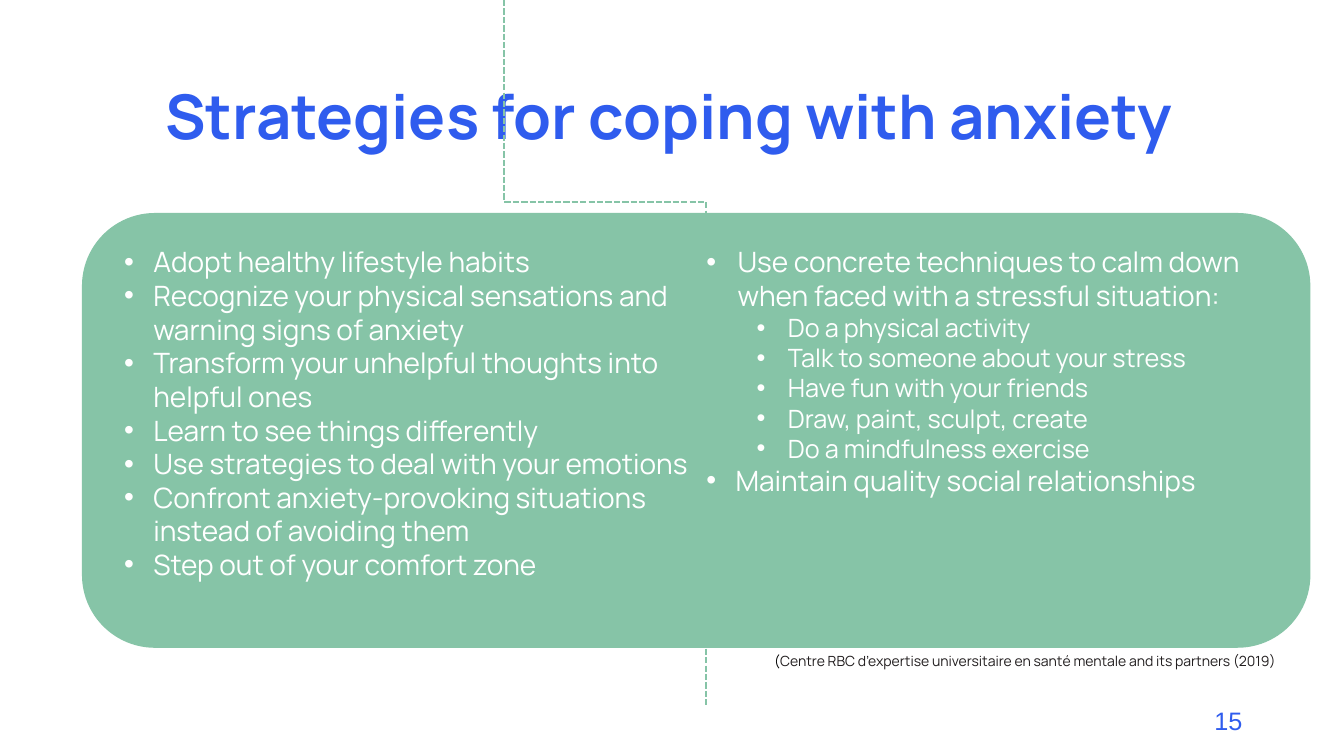
"""Build the slide on strategies for coping with anxiety."""
from lxml import etree
from pptx import Presentation
from pptx.dml.color import RGBColor
from pptx.enum import dml, shapes, text
from pptx.oxml import ns
from pptx.util import Inches, Pt

BLUE = RGBColor(0x2F, 0x5C, 0xEE)
GREEN = RGBColor(0x86, 0xC4, 0xA7)
WHITE = RGBColor(0xFF, 0xFF, 0xFF)
BLACK = RGBColor(0x00, 0x00, 0x00)
DARK = RGBColor(0x21, 0x1D, 0x1E)
FONT = "Manrope"

TITLE = "Strategies for coping with anxiety "
MAIN, WIDE, SUB = (0, 20, 0.39, 0.29), (0, 20, 0.41, 0.31), (1, 18, 0.91, 0.31)
COLUMNS = [
    [
        ("Adopt healthy lifestyle habits", MAIN),
        ("Recognize your physical sensations and warning signs of anxiety", MAIN),
        ("Transform your unhelpful thoughts into helpful ones", MAIN),
        ("Learn to see things differently", MAIN),
        ("Use strategies to deal with your emotions", MAIN),
        ("Confront anxiety-provoking situations instead of avoiding them", MAIN),
        ("Step out of your comfort zone", MAIN),
    ],
    [
        ("Use concrete techniques to calm down when faced with a stressful situation:", WIDE),
        ("Do a physical activity", SUB),
        ("Talk to someone about your stress", SUB),
        ("Have fun with your friends", SUB),
        ("Draw, paint, sculpt, create", SUB),
        ("Do a mindfulness exercise", SUB),
        ("Maintain quality social relationships", MAIN),
    ],
]
CITATION = [
    ("(", BLACK),
    ("Centre RBC d’expertise universitaire en santé mentale and its partners (2019) ", DARK),
]
PAGE_NUMBER = "15"
PANEL = (0.82, 2.12, 12.17, 4.3)
PANEL_INSET = 0.31
PATH_START = (5.29, 0.1)
PATH_CURVES = [
    ((4.8, 0.37), (4.3, 0.63), (4.63, 1.05)),
    ((4.96, 1.46), (6.53, 2.02), (7.29, 2.58)),
    ((8.05, 3.15), (9.24, 3.78), (9.19, 4.44)),
    ((9.15, 5.11), (8.08, 5.84), (7.01, 6.57)),
]
CURVE_STEPS = 24


def set_font(font, size, color, name=FONT, bold=False):
    """Apply the given look to a font."""
    font.name, font.size, font.bold = name, Pt(size), bold
    font.color.rgb = color


def add_text_box(slide, left, top, width, height):
    """Add a wrapping text box and return its text frame."""
    box = slide.shapes.add_textbox(*map(Inches, (left, top, width, height)))
    box.text_frame.word_wrap = True
    return box.text_frame


def add_dashed_path(slide):
    """Draw the winding dashed line."""
    points = []
    start = PATH_START
    for curve in PATH_CURVES:
        for step in range(1, CURVE_STEPS + 1):
            t = step / CURVE_STEPS
            weights = ((1 - t) ** 3, 3 * t * (1 - t) ** 2, 3 * t ** 2 * (1 - t), t ** 3)
            points.append(tuple(
                sum(weight * point[axis] for weight, point in zip(weights, (start, *curve)))
                for axis in (0, 1)))
        start = curve[-1]
    builder = slide.shapes.build_freeform(*PATH_START, scale=Inches(1))
    builder.add_line_segments(points, close=False)
    path = builder.convert_to_shape()
    path.shadow.inherit = False
    path.fill.background()
    path.line.color.rgb = GREEN
    path.line.width = Pt(1.5)
    path.line.dash_style = dml.MSO_LINE.SQUARE_DOT


def add_title(slide):
    """Place and format the title."""
    title = slide.shapes.title
    title.left, title.top, title.width, title.height = map(Inches, (0.27, 0.46, 12.86, 1.45))
    title.text_frame.text = TITLE
    title.text_frame.vertical_anchor = text.MSO_ANCHOR.MIDDLE
    paragraph = title.text_frame.paragraphs[0]
    paragraph.alignment = text.PP_ALIGN.CENTER
    paragraph.line_spacing = 0.9
    set_font(paragraph.runs[0].font, 44, BLUE, bold=True)


def add_bullet(paragraph, wording, style):
    """Fill a paragraph with one bulleted strategy."""
    level, size, margin, hanging = style
    paragraph.text = wording
    paragraph.level = level
    properties = paragraph._p.get_or_add_pPr()
    properties.set("marL", str(Inches(margin)))
    properties.set("indent", str(-Inches(hanging)))
    etree.SubElement(properties, ns.qn("a:buFont")).set("typeface", "Arial")
    etree.SubElement(properties, ns.qn("a:buChar")).set("char", "•")
    set_font(paragraph.runs[0].font, size, WHITE)


def add_panel(slide):
    """Draw the rounded panel and its columns of strategies."""
    left, top, width, height = PANEL
    panel = slide.shapes.add_shape(
        shapes.MSO_SHAPE.ROUNDED_RECTANGLE, *map(Inches, PANEL))
    panel.shadow.inherit = False
    panel.fill.solid()
    panel.fill.fore_color.rgb = GREEN
    panel.line.color.rgb = GREEN
    panel.line.width = Pt(1)
    column_width = (width - 2 * PANEL_INSET) / len(COLUMNS)
    for index, strategies in enumerate(COLUMNS):
        frame = add_text_box(
            slide, left + PANEL_INSET + index * column_width, top + PANEL_INSET,
            column_width, height - 2 * PANEL_INSET)
        frame.margin_left = frame.margin_right = frame.margin_top = frame.margin_bottom = 0
        for number, (wording, style) in enumerate(strategies):
            paragraph = frame.add_paragraph() if number else frame.paragraphs[0]
            add_bullet(paragraph, wording, style)


def add_footer(slide):
    """Add the citation and the page number."""
    paragraph = add_text_box(slide, 7.58, 6.42, 5.75, 0.27).paragraphs[0]
    for wording, color in CITATION:
        run = paragraph.add_run()
        run.text = wording
        set_font(run.font, 10, color)
    paragraph = add_text_box(slide, 9.42, 6.95, 3, 0.4).paragraphs[0]
    paragraph.text = PAGE_NUMBER
    paragraph.alignment = text.PP_ALIGN.RIGHT
    set_font(paragraph.runs[0].font, 18, BLUE, name="Arial")


def main():
    """Assemble and save the presentation."""
    presentation = Presentation()
    presentation.slide_width, presentation.slide_height = Inches(13.33), Inches(7.5)
    slide = presentation.slides.add_slide(presentation.slide_layouts[5])
    add_dashed_path(slide)
    add_title(slide)
    add_panel(slide)
    add_footer(slide)
    presentation.save("out.pptx")


if __name__ == "__main__":
    main()
